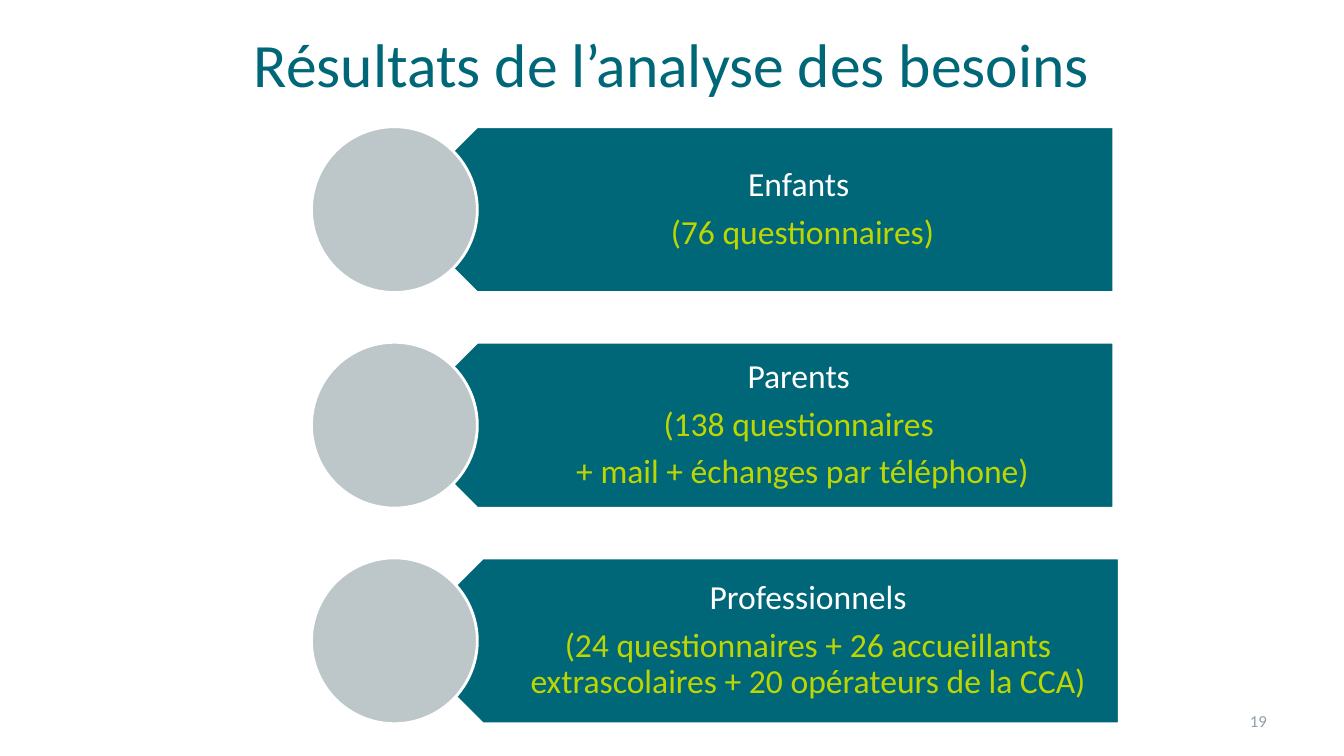
from pptx import Presentation
from pptx import util as u
from pptx.dml.color import RGBColor
from pptx.enum import shapes, text

THEME = {
    "font": "Calibri",
    "teal": RGBColor.from_string("006778"),
    "lime": RGBColor.from_string("BED600"),
    "grey": RGBColor.from_string("BDC7CA"),
    "number": RGBColor.from_string("8CA0A8"),
    "white": RGBColor.from_string("FFFFFF"),
    "title_size": u.Pt(44),
    "body_size": u.Pt(24),
    "number_size": u.Pt(12),
}
CENTER, RIGHT = text.PP_ALIGN.CENTER, text.PP_ALIGN.RIGHT
FRAME = {
    "word_wrap": True,
    "auto_size": text.MSO_AUTO_SIZE.NONE,
    "vertical_anchor": text.MSO_ANCHOR.MIDDLE,
}
BAR_FRAME = FRAME | {"margin_left": u.Pt(52.5), "margin_right": u.Pt(13.5),
                     "margin_top": u.Pt(7.2), "margin_bottom": u.Pt(7.2)}
BAR_PARAGRAPH = {"alignment": CENTER, "line_spacing": 0.9, "space_after": u.Pt(8)}


def write(tf, lines, frame, paragraph, size):
    for key, value in frame.items():
        setattr(tf, key, value)
    for i, (line, color) in enumerate(lines):
        p = tf.paragraphs[0] if i == 0 else tf.add_paragraph()
        for key, value in paragraph.items():
            setattr(p, key, value)
        r = p.add_run()
        r.text = line
        for key, value in {"name": THEME["font"], "size": THEME[size]}.items():
            setattr(r.font, key, value)
        r.font.color.rgb = THEME[color]


def add_outlined(kind, box, fill):
    sp = s.shapes.add_shape(kind, *map(u.Pt, box))
    sp.shadow.inherit = False
    sp.fill.solid()
    sp.fill.fore_color.rgb = THEME[fill]
    sp.line.color.rgb = THEME["white"]
    sp.line.width = u.Pt(2)
    return sp


prs = Presentation()
prs.slide_width, prs.slide_height = u.Pt(960), u.Pt(540)
s = prs.slides.add_slide(prs.slide_layouts[5])

title = s.shapes.title
for key, value in zip(("left", "top", "width", "height"), (48, 0, 864, 90)):
    setattr(title, key, u.Pt(value))
write(title.text_frame, [("Résultats de l’analyse des besoins", "teal")],
      FRAME, {"alignment": CENTER}, "title_size")

groups = [
    (0, ["Enfants ", "(76 questionnaires)"]),
    (0, ["Parents ", "(138 questionnaires ", "+ mail + échanges par téléphone)"]),
    (4, ["Professionnels",
         "(24 questionnaires + 26 accueillants extrascolaires + 20 opérateurs de la CCA)"]),
]
TOP, STEP, SIDE = 90.5, 154, 118.5

for row, (shift, lines) in enumerate(groups):
    top = TOP + row * STEP
    bar = add_outlined(shapes.MSO_SHAPE.PENTAGON, (281.5 + shift, top, 514, SIDE), "teal")
    bar.rotation = 180
    label = s.shapes.add_textbox(*map(u.Pt, (311.5 + shift, top, 484.5, SIDE)))
    colors = ["white"] + ["lime"] * (len(lines) - 1)
    write(label.text_frame, zip(lines, colors), BAR_FRAME, BAR_PARAGRAPH, "body_size")
    add_outlined(shapes.MSO_SHAPE.OVAL, (222.5, top, SIDE, SIDE), "grey")

number = s.shapes.add_textbox(*map(u.Pt, (688, 500.5, 224, 28.75)))
write(number.text_frame, [("19", "number")], FRAME, {"alignment": RIGHT}, "number_size")

prs.save("out.pptx")
